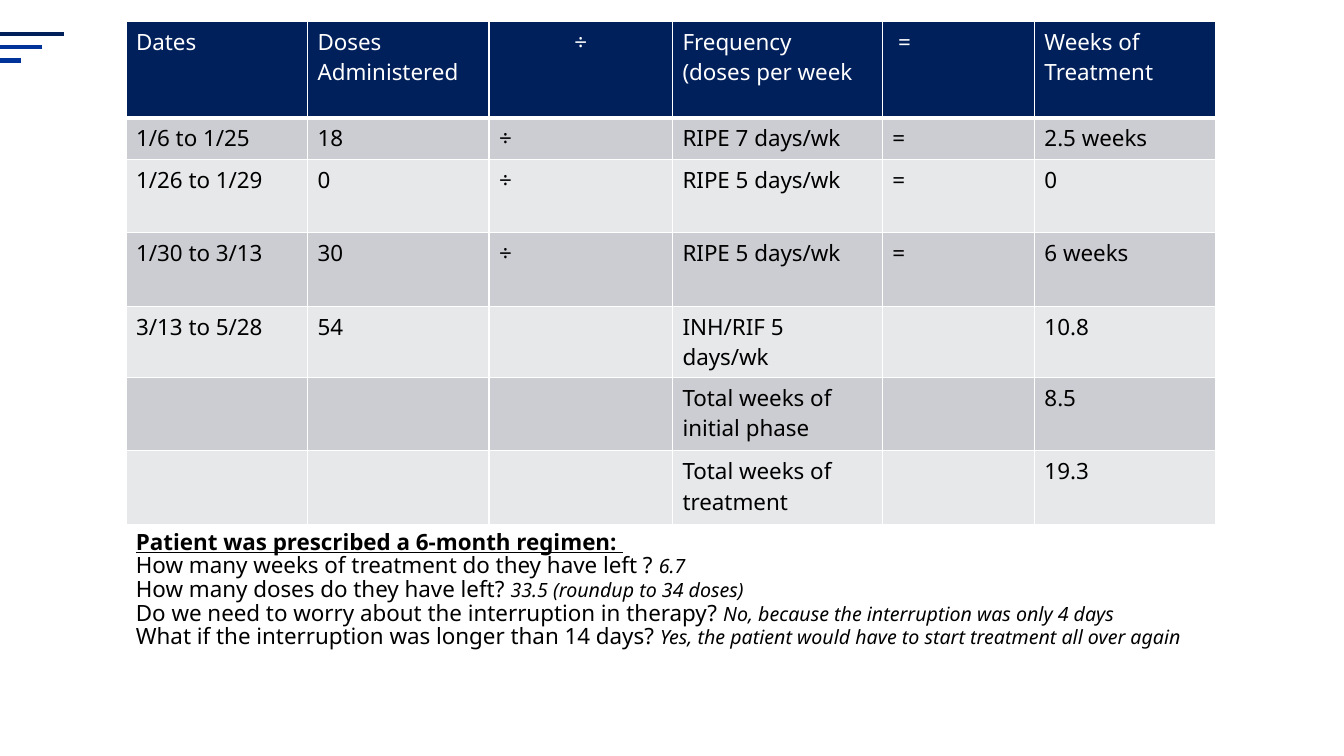
"""Build a slide that counts doses and weeks of treatment."""
from lxml import etree
from pptx import Presentation
from pptx import util as u
from pptx.dml import color
from pptx.enum import shapes
from pptx.oxml import ns

THEME = {
    "font": "Noto Sans", "body": 16, "answer": 14,
    "navy": "00205B", "blue": "003399", "white": "FFFFFF", "black": "000000",
    "bands": ("CCCDD2", "E7E8EA"),
}
ACCENTS = [(0.63, 0.34, "navy"), (0.42, 0.47, "blue"), (0.21, 0.6, "blue")]
LEFT, WIDTH = 1.25, 10.83
TABLE_TOP, TABLE_HEIGHT = 0.21, 4.7
COLUMNS = [1.8, 1.8, 1.82, 2.08, 1.51, 1.8]
HEIGHTS = [0.96, 0.41, 0.73, 0.73, 0.41, 0.73, 0.73]
ROWS = [
    ("Dates", "Doses Administered", "÷", "Frequency\n(doses per week", " =", "Weeks of Treatment"),
    ("1/6 to 1/25", "18", "÷", "RIPE 7 days/wk", "=", "2.5 weeks"),
    ("1/26 to 1/29", "0", "÷", "RIPE 5 days/wk", "=", "0"),
    ("1/30 to 3/13", "30", "÷", "RIPE 5 days/wk", "=", "6 weeks"),
    ("3/13 to 5/28", "54", "", "INH/RIF 5 days/wk", "", "10.8"),
    ("", "", "", "Total weeks of initial phase", "", "8.5"),
    ("", "", "", "Total weeks of treatment", "", "19.3"),
]
HEADING = "Patient was prescribed a 6-month regimen: "
QUESTIONS = [
    ("How many weeks of treatment do they have left ? ", "6.7"),
    ("How many doses do they have left? ", "33.5 (roundup to 34 doses)"),
    ("Do we need to worry about the interruption in therapy? ",
     "No, because the interruption was only 4 days"),
    ("What if the interruption was longer than 14 days? ",
     "Yes, the patient would have to start treatment all over again"),
]


def rgb(value):
    return color.RGBColor.from_string(value)


def style(font, size, colour):
    font.name = THEME["font"]
    font.size = u.Pt(size)
    font.color.rgb = rgb(colour)


def add_accents(slide):
    for length, top, colour in ACCENTS:
        line = slide.shapes.add_connector(
            shapes.MSO_CONNECTOR.STRAIGHT,
            u.Inches(length), u.Inches(top), u.Inches(0), u.Inches(top))
        line.line.color.rgb = rgb(THEME[colour])
        line.line.width = u.Pt(3)
        etree.SubElement(line._element.spPr, ns.qn("a:effectLst"))


def add_borders(cell, row):
    properties = cell._tc.get_or_add_tcPr()
    widths = {"L": 1, "R": 1, "T": 3 if row == 1 else 1, "B": 3 if row == 0 else 1}
    for side, width in widths.items():
        border = etree.SubElement(properties, ns.qn(f"a:ln{side}"), w=str(u.Pt(width)))
        fill = etree.SubElement(border, ns.qn("a:solidFill"))
        etree.SubElement(fill, ns.qn("a:srgbClr"), val=THEME["white"])


def add_dose_table(slide):
    frame = slide.shapes.add_table(
        len(ROWS), len(COLUMNS), u.Inches(LEFT), u.Inches(TABLE_TOP),
        u.Inches(WIDTH), u.Inches(TABLE_HEIGHT))
    table = frame.table
    for column, width in zip(table.columns, COLUMNS):
        column.width = u.Inches(width)
    for row, (texts, height) in enumerate(zip(ROWS, HEIGHTS)):
        table.rows[row].height = u.Inches(height)
        header = row == 0
        fill = THEME["navy"] if header else THEME["bands"][(row - 1) % 2]
        for column, words in enumerate(texts):
            cell = table.cell(row, column)
            add_borders(cell, row)
            cell.fill.solid()
            cell.fill.fore_color.rgb = rgb(fill)
            cell.text_frame.text = words
            for paragraph in cell.text_frame.paragraphs:
                style(paragraph.font, THEME["body"], THEME["white" if header else "black"])
                for run in paragraph.runs:
                    style(run.font, THEME["body"], THEME["white" if header else "black"])
                    run.font.bold = False
    table.cell(0, 2).text_frame.paragraphs[0].alignment = 2


def add_questions(slide):
    box = slide.shapes.add_textbox(
        u.Inches(LEFT), u.Inches(5.22), u.Inches(WIDTH), u.Inches(1.72))
    frame = box.text_frame
    frame.word_wrap = True
    frame.text = "\n".join([HEADING] + [question for question, _ in QUESTIONS])
    heading, *questions = frame.paragraphs
    for paragraph in frame.paragraphs:
        paragraph.line_spacing = 0.88
        style(paragraph.runs[0].font, THEME["body"], THEME["black"])
    heading.runs[0].font.bold = True
    heading.runs[0].font.underline = True
    for paragraph, (_, answer) in zip(questions, QUESTIONS):
        run = paragraph.add_run()
        run.text = answer
        style(run.font, THEME["answer"], THEME["black"])
        run.font.italic = True


def main():
    presentation = Presentation()
    presentation.slide_width = u.Inches(13.33)
    presentation.slide_height = u.Inches(7.5)
    slide = presentation.slides.add_slide(presentation.slide_layouts[6])
    add_accents(slide)
    add_dose_table(slide)
    add_questions(slide)
    presentation.save("out.pptx")


if __name__ == "__main__":
    main()
